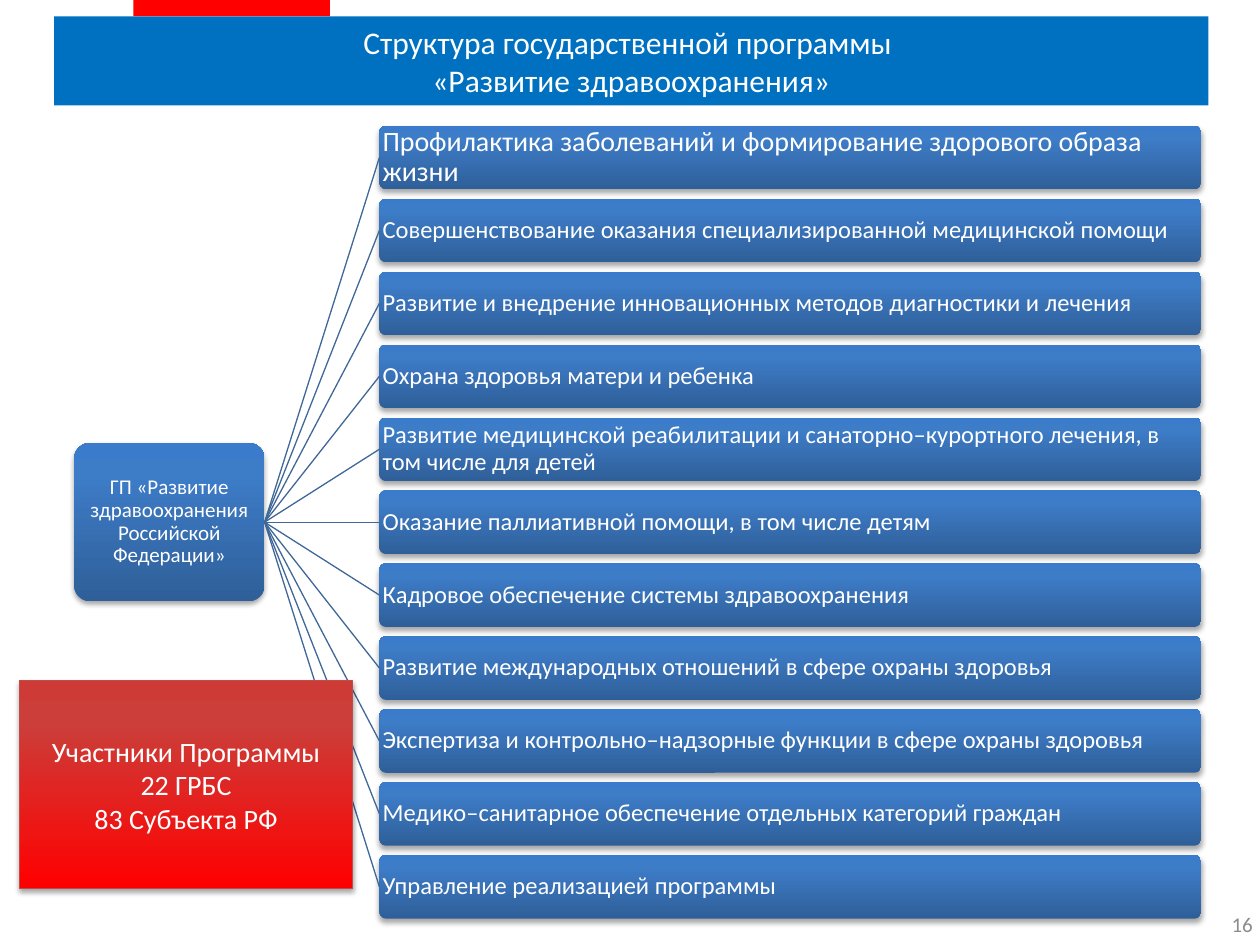
from pptx import Presentation
from pptx.dml.color import RGBColor
from pptx.enum.shapes import MSO_CONNECTOR, MSO_SHAPE
from pptx.enum.text import MSO_ANCHOR, PP_ALIGN
from pptx.oxml import parse_xml
from pptx.oxml.ns import nsdecls
from pptx.util import Pt
from lxml.etree import SubElement
from pptx.oxml.ns import qn

HUES = {
    "white": "FFFFFF", "title": "0070C0", "tab": "FF0000",
    "line": "3F6797", "edge": "BF4C48", "number": "8C8C8C",
}
BLUE = [(0, "2F5F99"), (80, "3D7CC7"), (100, "3A7CCB")]
RED = [(0, "FF0000"), (80, "CB3E3A"), (100, "CE3B37")]
FONT = "Calibri"
ROOT = "ГП «Развитие здравоохранения Российской Федерации»"
PARTS = [
    "Профилактика заболеваний и формирование здорового образа жизни",
    "Совершенствование оказания специализированной медицинской помощи",
    "Развитие и внедрение инновационных методов диагностики и лечения",
    "Охрана здоровья матери и ребенка",
    "Развитие медицинской реабилитации и санаторно–курортного лечения, в том числе для детей",
    "Оказание паллиативной помощи, в том числе детям",
    "Кадровое обеспечение системы здравоохранения",
    "Развитие международных отношений в сфере охраны здоровья",
    "Экспертиза и контрольно–надзорные функции в сфере охраны здоровья",
    "Медико–санитарное обеспечение отдельных категорий граждан",
    "Управление реализацией программы",
]


def color(name):
    return RGBColor.from_string(HUES[name])


def add_box(slide, kind, box, fill=None):
    """Add a preset shape without outline or shadow."""
    shape = slide.shapes.add_shape(kind, *map(Pt, box))
    shape.shadow.inherit = False
    shape.line.fill.background()
    if fill:
        shape.fill.solid()
        shape.fill.fore_color.rgb = color(fill)
    return shape


def shade(shape, stops):
    """Fill with a gradient rising from the bottom, and cast a soft shadow."""
    shape.fill.gradient()
    shape.fill.gradient_angle = 90
    props = shape._element.spPr
    ramp = props.find(".//" + qn("a:gsLst"))
    for old in list(ramp):
        ramp.remove(old)
    for spot, hue in stops:
        stop = SubElement(ramp, qn("a:gs"), pos=str(spot * 1000))
        SubElement(stop, qn("a:srgbClr"), val=hue)
    props.find(qn("a:effectLst")).append(parse_xml(
        f'<a:outerShdw {nsdecls("a")} blurRad="{Pt(3.1)}" dist="{Pt(1.8)}" '
        'dir="5400000" rotWithShape="0"><a:srgbClr val="000000">'
        '<a:alpha val="35000"/></a:srgbClr></a:outerShdw>'))


def write(shape, lines, size, align=PP_ALIGN.CENTER, hue="white", inset=None, space=None):
    frame = shape.text_frame
    frame.word_wrap = True
    frame.vertical_anchor = MSO_ANCHOR.MIDDLE
    if inset is not None:
        frame.margin_left = frame.margin_right = Pt(inset)
        frame.margin_top = frame.margin_bottom = Pt(inset)
    frame.text = "\n".join(lines)
    for para in frame.paragraphs:
        para.alignment = align
        para.line_spacing = space
        para.font.name = FONT
        para.font.size = Pt(size)
        para.font.color.rgb = color(hue)


def add_title(slide, box):
    left, top, _, _ = box
    bar = add_box(slide, MSO_SHAPE.RECTANGLE, box, "title")
    write(bar, ["Структура государственной программы ", "«Развитие здравоохранения»"], 18)
    add_box(slide, MSO_SHAPE.RECTANGLE, (left + 45.3, top - 11.5, 112.3, 11.5), "tab")


def add_node(slide, box, text, size, align):
    node = add_box(slide, MSO_SHAPE.ROUNDED_RECTANGLE, box)
    node.adjustments[0] = 0.1
    shade(node, BLUE)
    write(node, [text], size, align, inset=0.8, space=0.9)
    return node


def add_link(slide, start, end):
    link = slide.shapes.add_connector(MSO_CONNECTOR.STRAIGHT, 0, 0, 0, 0)
    link.begin_connect(start, 3)
    link.end_connect(end, 1)
    link.line.color.rgb = color("line")
    link.line.width = Pt(0.75)
    SubElement(link._element.spPr, qn("a:effectLst"))


def add_tree(slide, box):
    """Place the programme at the left, linked to its parts at the right."""
    left, top, width, height = box
    root_w, root_h, row_w, row_h = 108.8, 90.6, 469.6, 36.3
    pitch = (height - row_h) / (len(PARTS) - 1)
    # The root is level with the sixth part.
    mid = top + 5 * pitch + row_h / 2
    root = add_node(slide, (left, mid - root_h / 2, root_w, root_h),
                    ROOT, 12, PP_ALIGN.CENTER)
    for i, text in enumerate(PARTS):
        place = (left + width - row_w, top + i * pitch, row_w, row_h)
        row = add_node(slide, place, text, 14 if i else 16, PP_ALIGN.LEFT)
        add_link(slide, root, row)


def add_members(slide, box):
    card = add_box(slide, MSO_SHAPE.RECTANGLE, box)
    shade(card, RED)
    card.line.color.rgb = color("edge")
    card.line.width = Pt(0.75)
    write(card, ["Участники Программы", "22 ГРБС", "83 Субъекта РФ"], 16)


def add_number(slide, box):
    label = slide.shapes.add_textbox(*map(Pt, box))
    write(label, ["16"], 12, PP_ALIGN.RIGHT, "number")


def main():
    deck = Presentation()
    deck.slide_width, deck.slide_height = Pt(720), Pt(540)
    slide = deck.slides.add_slide(deck.slide_layouts[6])
    add_title(slide, (31, 9.3, 659.5, 51))
    add_number(slide, (555, 513.6, 168, 28.8))
    add_tree(slide, (42.4, 71.9, 644, 453))
    add_members(slide, (11.3, 388.8, 190.1, 119))
    deck.save("out.pptx")


if __name__ == "__main__":
    main()
